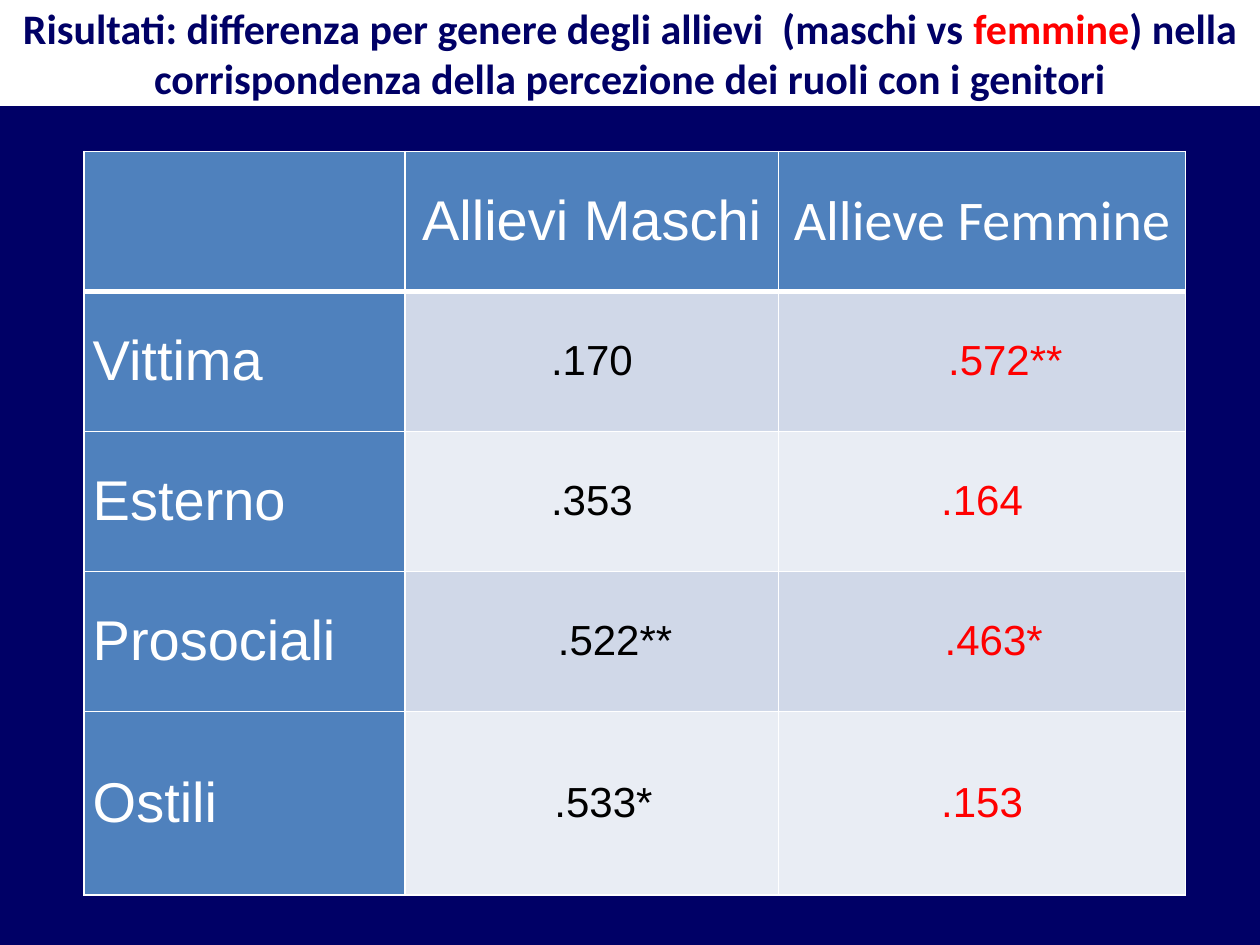
from dataclasses import dataclass

from lxml.etree import SubElement
from pptx import Presentation
from pptx.dml.color import RGBColor as RGB
from pptx.enum.shapes import MSO_SHAPE as SHAPE
from pptx.enum.text import MSO_ANCHOR as ANCHOR, PP_ALIGN as ALIGN
from pptx.oxml.ns import qn
from pptx.util import Pt


@dataclass(frozen=True)
class Theme:
    navy: str = "000066"
    white: str = "FFFFFF"
    red: str = "FF0000"
    black: str = "000000"
    blue: str = "4F81BD"
    bands: tuple = ("D0D8E8", "E9EDF4")
    body: str = "Arial"
    heading: str = "Calibri"
    small: int = 24
    large: int = 32


T = Theme()

TITLE = [
    ("Risultati: differenza per genere degli allievi  (maschi vs ", T.navy),
    ("femmine", T.red),
    (") nella corrispondenza della percezione dei ruoli con i genitori", T.navy),
]
ROWS = [
    ("", "Allievi Maschi", "Allieve Femmine"),
    ("Vittima", ".170", ".572**"),
    ("Esterno", ".353", ".164"),
    ("Prosociali", ".522**", ".463*"),
    ("Ostili", ".533*", ".153"),
]
COL_WIDTHS = (183.5, 213.5, 232.5)
ROW_HEIGHTS = (80, 80, 80, 80, 105)
STAR_INDENT = 13.3  # extra left margin for each significance star


def style(font, name, size, color, bold=False):
    font.name, font.size, font.bold = name, Pt(size), bold
    font.color.rgb = RGB.from_string(color)


def add_title(s, left, top, width, height):
    sp = s.shapes.add_shape(SHAPE.RECTANGLE, Pt(left), Pt(top), Pt(width), Pt(height))
    sp.shadow.inherit = False
    sp.fill.solid()
    sp.fill.fore_color.rgb = RGB.from_string(T.white)
    sp.line.fill.background()
    tf = sp.text_frame
    tf.word_wrap = True
    tf.vertical_anchor = ANCHOR.MIDDLE
    tf.margin_top = tf.margin_bottom = 0
    p = tf.paragraphs[0]
    p.alignment = ALIGN.CENTER
    for text, color in TITLE:
        r = p.add_run()
        r.text = text
        style(r.font, T.heading, T.small, color, bold=True)


def set_borders(cell, top, bottom):
    """White cell borders; they must come before the fill in the cell properties."""
    tc_pr = cell._tc.get_or_add_tcPr()
    sides = (("a:lnL", 1), ("a:lnR", 1), ("a:lnT", top), ("a:lnB", bottom))
    for i, (tag, width) in enumerate(sides):
        ln = SubElement(tc_pr, qn(tag), w=str(Pt(width)))
        SubElement(SubElement(ln, qn("a:solidFill")), qn("a:srgbClr"), val=T.white)
        tc_pr.insert(i, ln)


def fill_cell(cell, row, col, text):
    header, label = row == 0, col == 0
    cell.fill.solid()
    fill = T.blue if header or label else T.bands[(row - 1) % 2]
    cell.fill.fore_color.rgb = RGB.from_string(fill)
    set_borders(cell, top=3 if row == 1 else 1, bottom=3 if header else 1)

    cell.vertical_anchor = ANCHOR.MIDDLE
    cell.margin_left = Pt(5 + STAR_INDENT * text.count("*"))
    cell.margin_right = Pt(5)
    cell.margin_top = cell.margin_bottom = 0

    p = cell.text_frame.paragraphs[0]
    p.text = text
    p.alignment = ALIGN.LEFT if label else ALIGN.CENTER
    if header or label:
        name = T.heading if header and col == 2 else T.body
        style(p.font, name, T.large, T.white)
    else:
        style(p.font, T.body, T.small, T.red if col == 2 else T.black)


def add_results(s, left, top):
    frame = s.shapes.add_table(len(ROWS), len(COL_WIDTHS), Pt(left), Pt(top),
                               Pt(sum(COL_WIDTHS)), Pt(sum(ROW_HEIGHTS)))
    table = frame.table
    for column, width in zip(table.columns, COL_WIDTHS):
        column.width = Pt(width)
    for i, (height, texts) in enumerate(zip(ROW_HEIGHTS, ROWS)):
        table.rows[i].height = Pt(height)
        for j, text in enumerate(texts):
            fill_cell(table.cell(i, j), i, j, text)


def main():
    prs = Presentation()
    prs.slide_width, prs.slide_height = Pt(720), Pt(540)
    s = prs.slides.add_slide(prs.slide_layouts[6])
    s.background.fill.solid()
    s.background.fill.fore_color.rgb = RGB.from_string(T.navy)
    add_title(s, 0, 0, 720, 60.5)
    add_results(s, 48, 86.5)
    prs.save("out.pptx")


if __name__ == "__main__":
    main()
